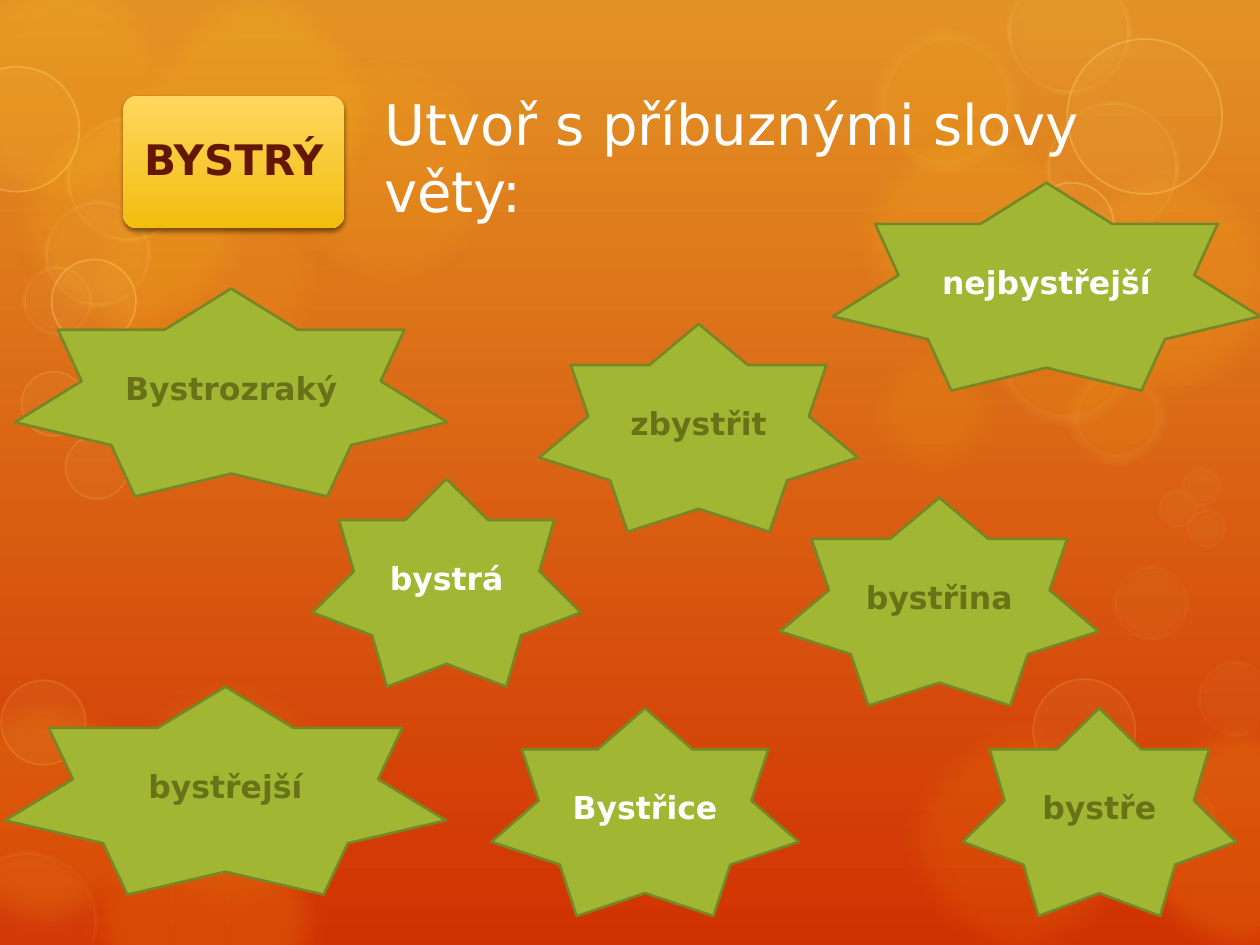
from lxml import etree
from pptx import Presentation
from pptx import util as u
from pptx.dml.color import RGBColor
from pptx.enum import shapes as sh, text as tx
from pptx.oxml.ns import qn

FONT = "DejaVu Sans"
GOLD, PALE, CREAM = "FDC61B", "FFE281", "FEEBAE"
WHITE, OLIVE = "FFFFFF", "687318"

# Blurred discs without outline: left, top, size, opacity
DISCS = [
    (0.57, 1.2, 2.09, 10), (2.05, 0.31, 2.09, 10), (0.57, 6.27, 2.09, 16),
    (-0.56, -0.32, 2.09, 14), (1.01, -0.18, 2.09, 20), (0, 0.72, 2.09, 15),
    (8.2, 1.2, 2.09, 15), (8.81, 5.62, 2.09, 16), (-0.69, 5.41, 2.09, 16),
    (0.77, 5.24, 2.09, 8), (6.69, 0.86, 2.09, 15), (7.06, 5.62, 2.09, 10),
    (6.75, 2.62, 1.33, 10),
]

# Outlined rings: (fill, opacity, line, width, line opacity, blur), places
RINGS = [
    ((GOLD, 10, CREAM, 14, 6, 8), [
        (6.94, 0.23, 1.14), (7.52, 1.59, 1.33), (7.89, 2.24, 1.14),
        (8.47, 2.91, 0.79)]),
    ((PALE, 5, PALE, 5, 15, 4), [
        (-0.35, 6.75, 1.13), (9, 6.2, 0.66), (8.83, 4.48, 0.61),
        (9.5, 5.24, 0.61), (9.37, 3.7, 0.33), (9.18, 3.87, 0.33),
        (9.41, 4.03, 0.33)]),
    ((PALE, 5, PALE, 1, 15, 0), [
        (0.01, 5.4, 0.67), (8.2, 5.39, 0.81), (0.17, 2.95, 0.51),
        (0.52, 3.46, 0.5)]),
    ((PALE, 5, PALE, 5, 30, 4), [
        (0.52, 0.92, 1), (0.35, 1.59, 0.85), (0.17, 2.1, 0.57),
        (7.99, -0.24, 0.99), (8.3, 0.8, 1.06)]),
    ((PALE, 5, PALE, 1, 30, 0), [
        (-0.36, 0.53, 0.99), (0.41, 2.06, 0.67), (8.47, 0.31, 1.23),
        (8.17, 1.45, 0.67)]),
]

# Word stars: word, left, top, width, text colour
STARS = [
    ("bystrá", 2.48, 3.8, 2.13, WHITE),
    ("bystřina", 6.19, 3.95, 2.53, OLIVE),
    ("Bystrozraký", 0.12, 2.29, 3.43, OLIVE),
    ("Bystřice", 3.9, 5.62, 2.44, WHITE),
    ("zbystřit", 4.28, 2.57, 2.53, OLIVE),
    ("bystřejší", 0.04, 5.45, 3.5, OLIVE),
    ("bystře", 7.64, 5.62, 2.17, OLIVE),
    ("nejbystřejší", 6.61, 1.45, 3.39, WHITE),
]


def rgb(code):
    return RGBColor.from_string(code)


def box(*sizes):
    return [u.Inches(n) for n in sizes]


def fade(node, part):
    etree.SubElement(node, qn("a:alpha"), val=str(part * 1000))


def effect(shape, kind, **attrs):
    """Add one effect to the shape and return its node."""
    chain = next(shape._element.iter(qn("a:effectLst")))
    return etree.SubElement(chain, qn("a:" + kind), attrs)


def blend(fill, top, low):
    """Vertical gradient from top to low."""
    fill.gradient()
    fill.gradient_angle = 270
    for stop, place, code in zip(fill.gradient_stops, (0, 1), (top, low)):
        stop.position = place
        stop.color.rgb = rgb(code)


def paint(shape, fill, line=None, width=1):
    shape.shadow.inherit = False
    shape.fill.solid()
    shape.fill.fore_color.rgb = rgb(fill)
    if line:
        shape.line.color.rgb = rgb(line)
        shape.line.width = u.Pt(width)
    else:
        shape.line.fill.background()


def write(shape, words, size=18, color=WHITE, bold=False,
          align=tx.PP_ALIGN.CENTER, space=None):
    frame = shape.text_frame
    frame.word_wrap = True
    frame.auto_size = tx.MSO_AUTO_SIZE.NONE
    frame.vertical_anchor = tx.MSO_ANCHOR.MIDDLE
    para = frame.paragraphs[0]
    para.alignment = align
    para.line_spacing = space
    run = para.add_run()
    run.text = words
    run.font.name, run.font.size, run.font.bold = FONT, u.Pt(size), bold
    run.font.color.rgb = rgb(color)


def bubble(slide, left, top, size, fill, part, line=None, width=1,
           shade=0, blur=0):
    """Translucent circle with an optional ring and blurred edge."""
    disc = slide.shapes.add_shape(sh.MSO_SHAPE.OVAL,
                                  *box(left, top, size, size))
    paint(disc, fill, line, width)
    tints = disc._element.spPr.iter(qn("a:srgbClr"))
    for node, value in zip(list(tints), (part, shade)):
        fade(node, value)
    if blur:
        effect(disc, "softEdge", rad=str(u.Pt(blur)))


def button(slide, words):
    """Golden key word with a soft shadow."""
    group = slide.shapes.add_group_shape().shapes
    plate = group.add_shape(sh.MSO_SHAPE.ROUNDED_RECTANGLE,
                            *box(0.98, 0.76, 1.75, 1.05))
    plate.adjustments[0] = 0.1
    paint(plate, GOLD)
    blend(plate.fill, "FFD75D", "F2BD10")
    shade = effect(plate, "outerShdw", blurRad=str(u.Pt(3)),
                   dist=str(u.Pt(2)), dir="5400000", rotWithShape="0")
    fade(etree.SubElement(shade, qn("a:srgbClr"), val="000000"), 45)
    label = group.add_textbox(*box(1.01, 0.79, 1.69, 0.99))
    frame = label.text_frame
    frame.margin_left = frame.margin_right = u.Inches(0.1)
    frame.margin_top = frame.margin_bottom = u.Inches(0.1)
    write(label, words, size=24, color="631701", bold=True, space=0.9)


def star(slide, word, left, top, width, color):
    shape = slide.shapes.add_shape(sh.MSO_SHAPE.STAR_7_POINT,
                                   *box(left, top, width, 1.65))
    paint(shape, "A1B633", "778726", 1.5)
    write(shape, word, color=color, bold=True)


def main():
    deck = Presentation()
    deck.slide_width, deck.slide_height = box(10, 7.5)
    slide = deck.slides.add_slide(deck.slide_layouts[5])

    # Background
    blend(slide.background.fill, "E39325", "D13202")
    for left, top, size, part in DISCS:
        bubble(slide, left, top, size, GOLD, part, blur=14)
    for style, places in RINGS:
        for place in places:
            bubble(slide, *place, *style)

    # Title, brought in front of the bubbles
    title = slide.shapes.title
    title.left, title.top, title.width, title.height = box(
        2.95, 0.74, 5.94, 1.01)
    write(title, "Utvoř s příbuznými slovy věty:", size=32,
          align=tx.PP_ALIGN.LEFT)
    slide.shapes._spTree.append(title._element)

    # Key word and its relatives
    button(slide, "BYSTRÝ")
    for item in STARS:
        star(slide, *item)

    deck.save("out.pptx")


if __name__ == "__main__":
    main()
